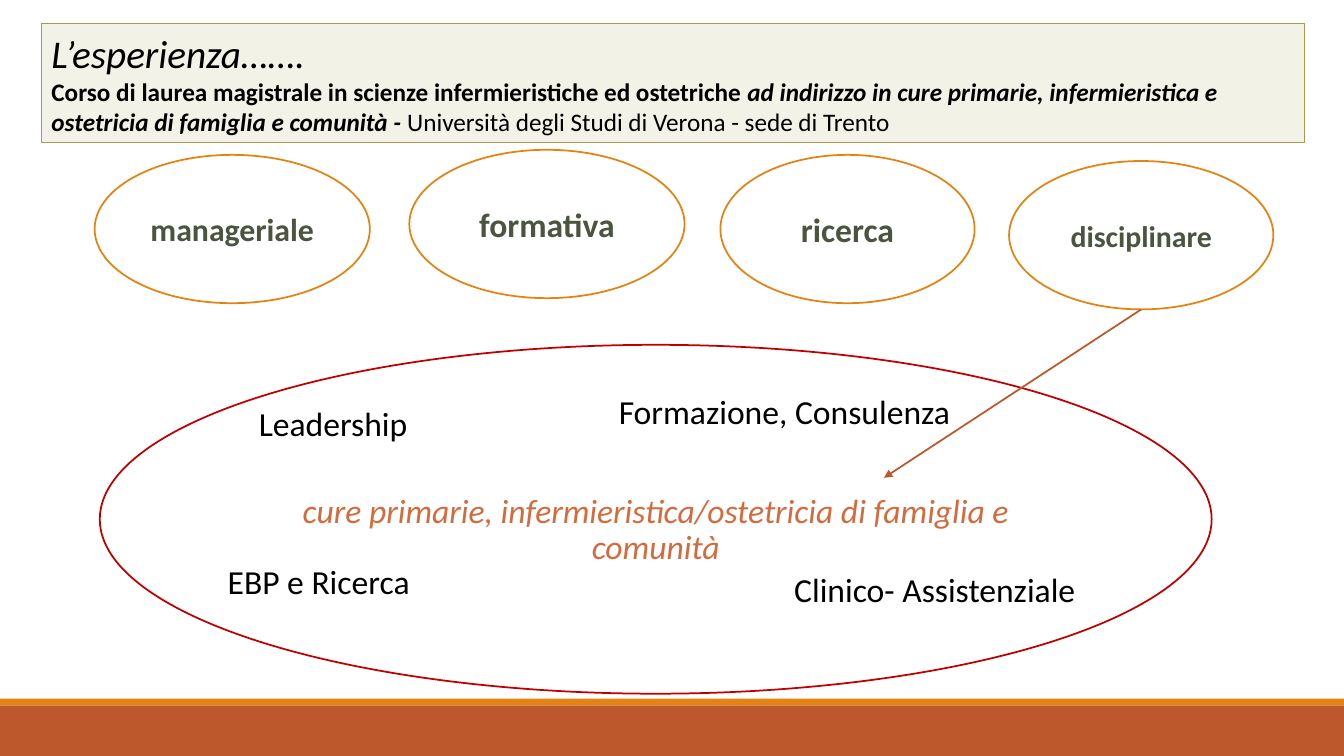
from pptx import Presentation
from pptx.dml.color import RGBColor
from pptx.enum.shapes import MSO_CONNECTOR as CONNECTOR, MSO_SHAPE as SHAPE
from pptx.enum.text import MSO_ANCHOR as ANCHOR, MSO_AUTO_SIZE as AUTO_SIZE, PP_ALIGN as ALIGN
from pptx.oxml.ns import qn
from pptx.util import Pt
from lxml import etree

WIDTH, HEIGHT = 960, 540
ORANGE, RUST, RED = "E48312", "BD582C", "C00000"
BLACK, WHITE, GREEN, CORAL = "000000", "FFFFFF", "4A543E", "D26C3E"


def color(hex_string):
    return RGBColor.from_string(hex_string)


def add_run(paragraph, text, size, ink, bold=False, italic=False):
    run = paragraph.add_run()
    run.text = text
    font = run.font
    font.name, font.size, font.bold, font.italic = "Calibri", Pt(size), bold, italic
    font.color.rgb = color(ink)


def paint(shape, fill, line=None, line_width=1.25):
    shape.fill.solid()
    shape.fill.fore_color.rgb = color(fill)
    if line:
        shape.line.color.rgb = color(line)
        shape.line.width = Pt(line_width)
    else:
        shape.line.fill.background()


def add_shape(slide, kind, box, fill, line=None):
    shape = slide.shapes.add_shape(kind, *map(Pt, box))
    shape.shadow.inherit = False
    paint(shape, fill, line)
    return shape


def add_oval(slide, box, line, text, size, ink, **style):
    oval = add_shape(slide, SHAPE.OVAL, box, WHITE, line)
    frame = oval.text_frame
    frame.word_wrap = True
    frame.vertical_anchor = ANCHOR.MIDDLE
    paragraph = frame.paragraphs[0]
    paragraph.alignment = ALIGN.CENTER
    add_run(paragraph, text, size, ink, **style)
    return oval


def add_footer_bands(slide, box):
    left, top, width, height = box
    stripe = 4.8
    add_shape(slide, SHAPE.RECTANGLE, (left, top + stripe, width, height - stripe), RUST)
    add_shape(slide, SHAPE.RECTANGLE, (left, top, width, stripe), ORANGE)


def fill_title(slide, box):
    title = slide.shapes.title
    title.left, title.top, title.width, title.height = map(Pt, box)
    paint(title, "F3F2E6", "A39B4E", 0.75)
    frame = title.text_frame
    frame.word_wrap = True
    frame.auto_size = AUTO_SIZE.NONE
    frame.vertical_anchor = ANCHOR.TOP
    heading, course = frame.paragraphs[0], frame.add_paragraph()
    heading.alignment = course.alignment = ALIGN.LEFT
    add_run(heading, "L’esperienza…….", 28, BLACK, italic=True)
    add_run(course, "Corso di laurea magistrale in scienze infermieristiche ed ostetriche ",
            18, BLACK, bold=True)
    add_run(course, "ad indirizzo in cure primarie, infermieristica e ostetricia di famiglia "
            "e comunità - ", 18, BLACK, bold=True, italic=True)
    add_run(course, "Università degli Studi di Verona - sede di Trento", 18, BLACK)


def add_competence_ovals(slide, box):
    """Draw the row of ovals and return the last one."""
    left, top, _, height = box
    competences = [  # text, size, x and y offset, width
        ("manageriale", 22.7, 0, 3.6, 196.6),
        ("formativa", 24, 224.8, 0, 196.6),
        ("ricerca", 24, 447, 3.6, 181.6),
        ("disciplinare", 21.3, 653.2, 8, 188.8),
    ]
    for text, size, x, y, width in competences:
        oval = add_oval(slide, (left + x, top + y, width, height), ORANGE,
                        text, size, GREEN, bold=True)
    return oval


def add_care_area(slide, box):
    left, top, _, _ = box
    oval = add_oval(slide, box, RED,
                    "cure primarie, infermieristica/ostetricia di famiglia e comunità",
                    24, CORAL, italic=True)
    oval.text_frame.margin_top = Pt(20)
    oval.text_frame.paragraphs[0].line_spacing = 0.9
    labels = [  # text, x and y offset, width
        ("Leadership", 106.5, 38.2, 151),
        ("Formazione, Consulenza", 363.6, 29.5, 264),
        ("Clinico- Assistenziale", 488.9, 156.3, 302),
        ("EBP e Ricerca", 84.2, 150.5, 181),
    ]
    for text, x, y, label_width in labels:
        label = slide.shapes.add_textbox(Pt(left + x), Pt(top + y), Pt(label_width), Pt(36))
        label.text_frame.word_wrap = True
        add_run(label.text_frame.paragraphs[0], text, 24, BLACK)


def add_arrow(slide, source, end_x, end_y):
    """Draw an arrow from the bottom of the source shape to a point."""
    arrow = slide.shapes.add_connector(
        CONNECTOR.STRAIGHT, source.left + source.width // 2, source.top + source.height,
        Pt(end_x), Pt(end_y))
    arrow.line.color.rgb = color(RUST)
    arrow.line.width = Pt(1.25)
    properties = arrow.element.spPr
    etree.SubElement(properties.find(qn("a:ln")), qn("a:tailEnd"), type="triangle")
    etree.SubElement(properties, qn("a:effectLst"))


def main():
    presentation = Presentation()
    presentation.slide_width, presentation.slide_height = Pt(WIDTH), Pt(HEIGHT)
    slide = presentation.slides.add_slide(presentation.slide_layouts[5])
    add_footer_bands(slide, (0, 499, WIDTH, 41))
    fill_title(slide, (29.5, 17, 902, 85))
    add_care_area(slide, (71.3, 246.3, 794.2, 249.2))
    disciplinary = add_competence_ovals(slide, (67.6, 107, 842, 106))
    add_arrow(slide, disciplinary, 631.4, 341.3)
    presentation.save("out.pptx")


if __name__ == "__main__":
    main()
